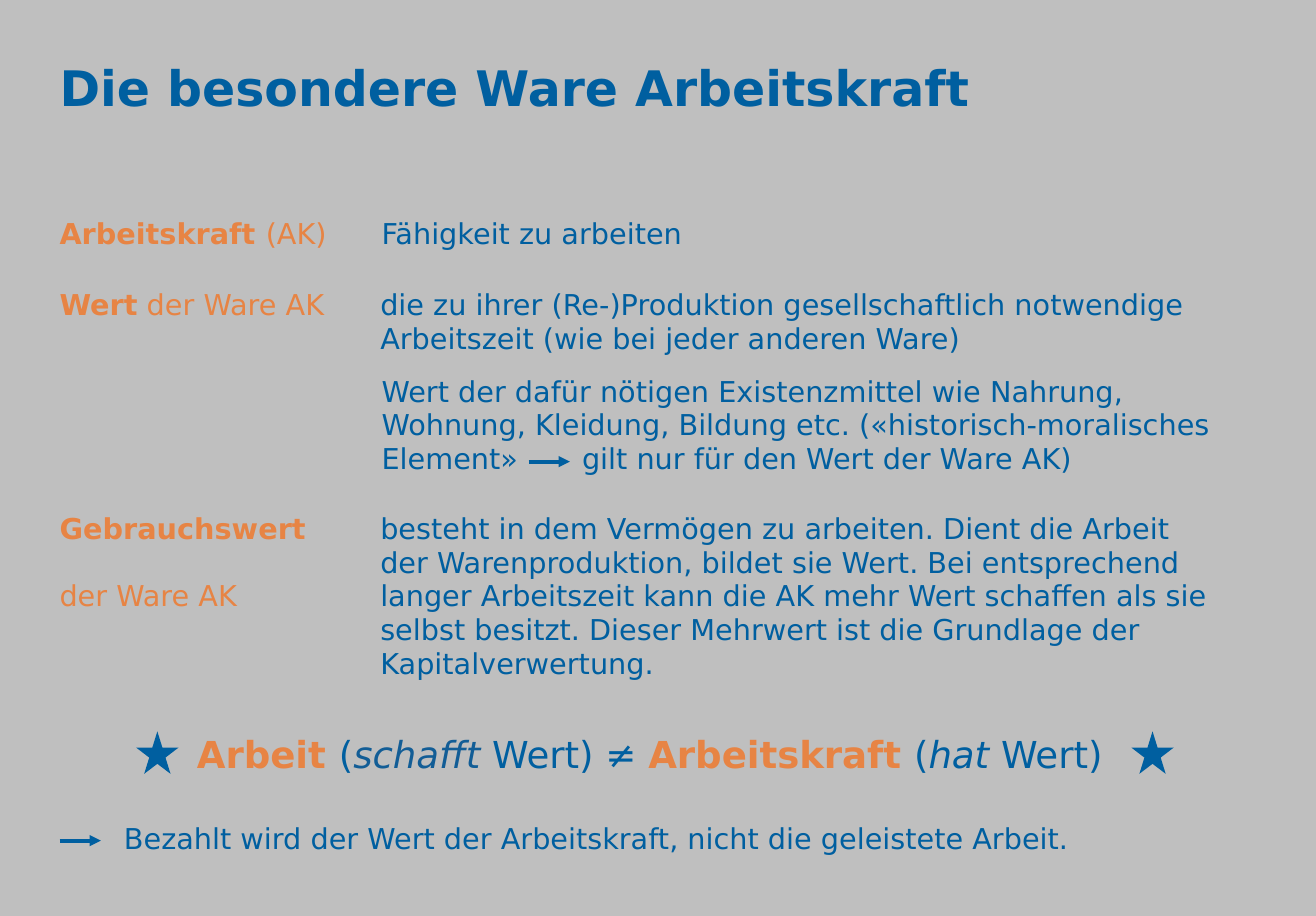
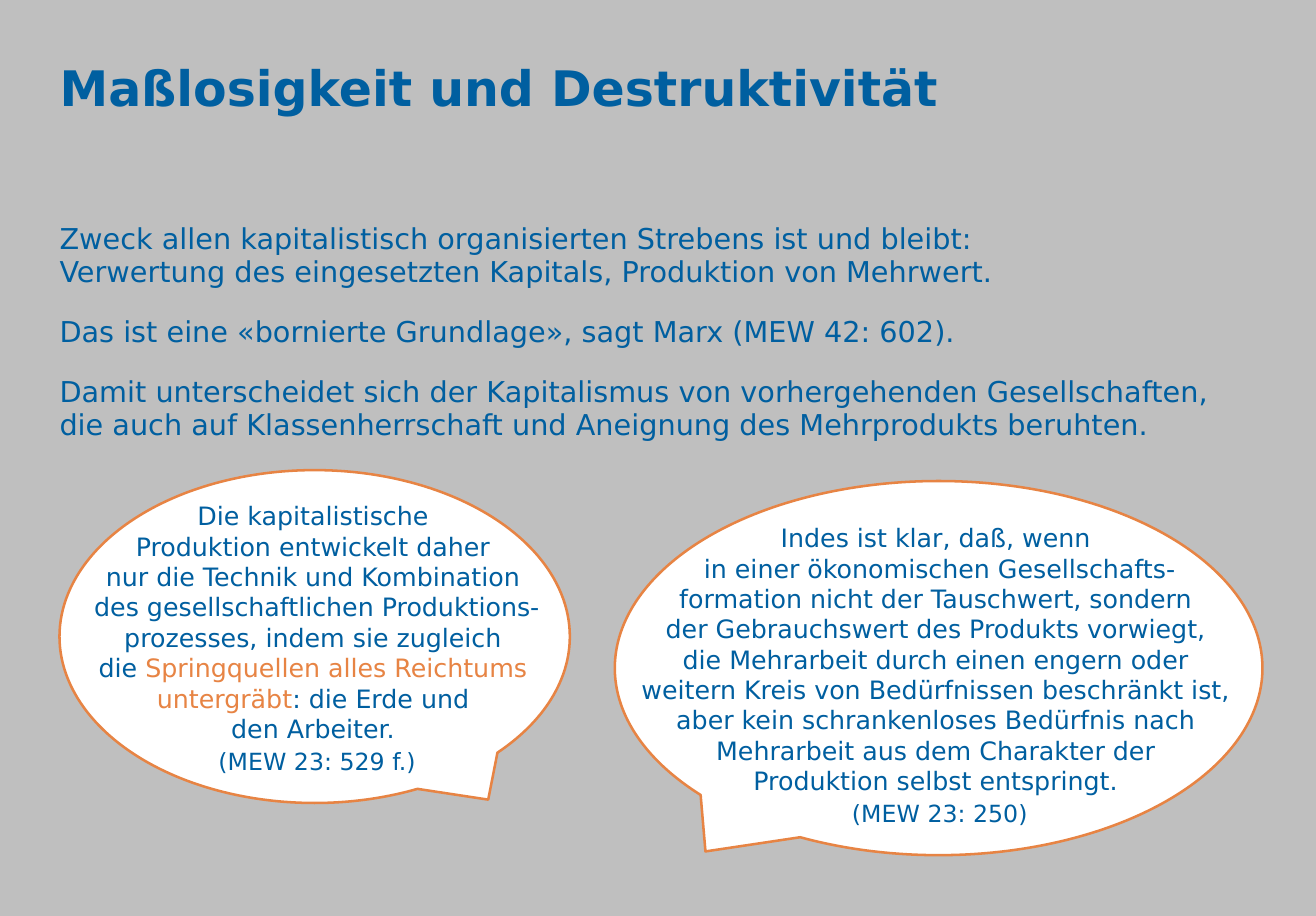
from lxml import etree
from pptx import Presentation
from pptx import util as u
from pptx.dml.color import RGBColor
from pptx.enum import shapes, text
from pptx.oxml import ns

COLORS = {
    "background": "BFBFBF",
    "blue": "005FA0",
    "orange": "E78444",
    "verb": "125D96",
    "white": "FFFFFF",
}
FONT = "DejaVu Sans"
LEFT = 0.49
TERM_WIDTH = 2.34
FULL_WIDTH = 9.83


def rgb(name):
    return RGBColor.from_string(COLORS[name])


class Deck:
    def __init__(self):
        self.prs = Presentation()
        self.prs.slide_width = u.Inches(10.83)
        self.prs.slide_height = u.Inches(7.54)
        background = self.prs.slide_master.background.fill
        background.solid()
        background.fore_color.rgb = rgb("background")
        self.slide = None

    def new_slide(self, heading):
        self.slide = self.prs.slides.add_slide(self.prs.slide_layouts[5])
        title = self.slide.shapes.title
        self.place(title, LEFT, 0.5, 9.84, 0.47)
        self.fill_frame(title.text_frame, [[(heading, "blue", "b")]], 29, 33)

    def place(self, shape, left, top, width, height):
        shape.left, shape.top = u.Inches(left), u.Inches(top)
        shape.width, shape.height = u.Inches(width), u.Inches(height)

    def fill_frame(self, frame, paragraphs, size, leading, align="LEFT", before=0):
        frame.word_wrap = True
        frame.auto_size = text.MSO_AUTO_SIZE.NONE
        frame.vertical_anchor = text.MSO_ANCHOR.TOP
        frame.margin_left = frame.margin_right = 0
        frame.margin_top = frame.margin_bottom = 0
        for index, runs in enumerate(paragraphs):
            paragraph = frame.add_paragraph() if index else frame.paragraphs[0]
            paragraph.alignment = getattr(text.PP_ALIGN, align)
            paragraph.line_spacing = u.Pt(leading)
            paragraph.space_before = u.Pt(before if index else 0)
            for wording, color, style in runs:
                self.add_run(paragraph, wording, color, style, size)

    def add_run(self, paragraph, wording, color, style, size):
        for index, line in enumerate(wording.split("\n")):
            if index:
                paragraph.add_line_break()
            if line:
                run = paragraph.add_run()
                run.text = line
                run.font.name = FONT
                run.font.size = u.Pt(size)
                run.font.bold = "b" in style
                run.font.italic = "i" in style
                run.font.color.rgb = rgb(color)

    def rich_text(self, box, paragraphs, size=17, leading=20, align="LEFT", before=0):
        frame = self.slide.shapes.add_textbox(*map(u.Inches, box)).text_frame
        self.fill_frame(frame, paragraphs, size, leading, align, before)
        return frame

    def body(self, box, wording):
        return self.rich_text(box, [[(wording, "blue", "")]])

    def tab_stop(self, paragraph, position):
        stops = etree.SubElement(paragraph._p.get_or_add_pPr(), ns.qn("a:tabLst"))
        etree.SubElement(stops, ns.qn("a:tab"), pos=str(u.Inches(position)), algn="l")

    def arrow(self, left, y, length=0.34):
        arrow = self.slide.shapes.add_connector(
            shapes.MSO_CONNECTOR.STRAIGHT,
            u.Inches(left), u.Inches(y), u.Inches(left + length), u.Inches(y))
        arrow.line.color.rgb = rgb("blue")
        arrow.line.width = u.Pt(2.25)
        etree.SubElement(arrow.line._get_or_add_ln(), ns.qn("a:tailEnd"), type="triangle")
        etree.SubElement(arrow._element.spPr, ns.qn("a:effectLst"))

    def preset(self, kind, box, fill, outline=None):
        shape = self.slide.shapes.add_shape(kind, *map(u.Inches, box))
        shape.shadow.inherit = False
        shape.fill.solid()
        shape.fill.fore_color.rgb = rgb(fill)
        if outline:
            shape.line.color.rgb = rgb(outline)
            shape.line.width = u.Pt(1.5)
        else:
            shape.line.fill.background()
        return shape

    def star(self, left):
        self.preset(shapes.MSO_SHAPE.STAR_5_POINT, (left, 6.02, 0.35, 0.35), "blue")

    def quote(self, bubble_box, tip, quote_box, passages, reference):
        bubble = self.preset(shapes.MSO_SHAPE.OVAL_CALLOUT, bubble_box, "white", "orange")
        for index, value in enumerate(tip):
            bubble.adjustments[index] = value
        frame = self.rich_text(quote_box, passages, 15, 18, "CENTER")
        source = frame.add_paragraph()
        source.alignment = text.PP_ALIGN.CENTER
        source.line_spacing = u.Pt(19)
        self.add_run(source, reference, "blue", "", 14)


def labour_power_slide(deck):
    deck.new_slide("Die besondere Ware Arbeitskraft")
    terms = [
        (1.78, [[("Arbeitskraft ", "orange", "b"), ("(AK)", "orange", "")]]),
        (2.37, [[("Wert", "orange", "b"), (" der Ware AK", "orange", "")]]),
        (4.21, [[("Gebrauchswert", "orange", "b")], [("der Ware AK", "orange", "")]]),
    ]
    for top, term in terms:
        deck.rich_text((LEFT, top, TERM_WIDTH, 0.29 + 0.56 * (len(term) - 1)),
                       term, before=20)

    deck.body((3.14, 1.78, 6.42, 0.29), "Fähigkeit zu arbeiten")
    deck.body((3.13, 2.37, 7.2, 0.57),
              "die zu ihrer (Re-)Produktion gesellschaftlich notwendige "
              "Arbeitszeit (wie bei jeder anderen Ware)")
    deck.body((3.13, 4.21, 7.17, 1.43),
              "besteht in dem Vermögen zu arbeiten. Dient die Arbeit \n"
              "der Warenproduktion, bildet sie Wert. Bei entsprechend "
              "langer Arbeitszeit kann die AK mehr Wert schaffen als sie "
              "selbst besitzt. Dieser Mehrwert ist die Grundlage der "
              "Kapitalverwertung.")
    subsistence = deck.body(
        (3.14, 3.08, 7.04, 0.86),
        "Wert der dafür nötigen Existenzmittel wie Nahrung, "
        "Wohnung, Kleidung, Bildung etc. («historisch-moralisches "
        "Element»\tgilt nur für den Wert der Ware AK)")
    deck.tab_stop(subsistence.paragraphs[0], 1.65)
    deck.arrow(4.35, 3.8)

    deck.rich_text((LEFT, 6.04, 9.81, 0.35), [[
        ("Arbeit ", "orange", "b"),
        ("(", "blue", ""),
        ("schafft ", "verb", "i"),
        ("Wert) ≠ ", "blue", ""),
        ("Arbeitskraft ", "orange", "b"),
        ("(", "blue", ""),
        ("hat", "blue", "i"),
        (" Wert) ", "blue", ""),
    ]], 22, 25, "CENTER")
    for left in (1.12, 9.31):
        deck.star(left)

    deck.body((1.02, 6.76, 8.86, 0.29),
              "Bezahlt wird der Wert der Arbeitskraft, nicht die geleistete Arbeit.")
    deck.arrow(LEFT, 6.92)


def destructiveness_slide(deck):
    deck.new_slide("Maßlosigkeit und Destruktivität")
    theses = [
        (1.82, "Zweck allen kapitalistisch organisierten Strebens ist und bleibt: \n"
               "Verwertung des eingesetzten Kapitals, Produktion von Mehrwert."),
        (2.59, "Das ist eine «bornierte Grundlage», sagt Marx (MEW 42: 602)."),
        (3.08, "Damit unterscheidet sich der Kapitalismus von vorhergehenden "
               "Gesellschaften, \n"
               "die auch auf Klassenherrschaft und Aneignung des Mehrprodukts beruhten."),
    ]
    for top, thesis in theses:
        deck.body((LEFT, top, FULL_WIDTH, 0.29 + 0.28 * thesis.count("\n")), thesis)

    deck.quote(
        (5.06, 3.96, 5.33, 3.08), (-0.36, 0.49), (5.15, 4.3, 5.17, 2.53),
        [[("Indes ist klar, daß, wenn \n"
           "in einer ökonomischen Gesellschafts-\n"
           "formation nicht der Tauschwert, sondern \n"
           "der Gebrauchswert des Produkts vorwiegt, \n"
           "die Mehrarbeit durch einen engern oder \n"
           "weitern Kreis von Bedürfnissen beschränkt ist, \n"
           "aber kein schrankenloses Bedürfnis nach \n"
           "Mehrarbeit aus dem Charakter der \n"
           "Produktion selbst entspringt. ", "blue", "")]],
        "(MEW 23: 250)")
    deck.quote(
        (LEFT, 3.87, 4.2, 2.74), (0.34, 0.49), (0.44, 4.12, 4.34, 2.28),
        [[("Die kapitalistische \n"
           "Produktion entwickelt daher \n"
           "nur die Technik und Kombination \n"
           "des gesellschaftlichen Produktions-", "blue", "")],
         [("prozesses, indem sie zugleich \ndie ", "blue", ""),
          ("Springquellen alles Reichtums \nuntergräbt", "orange", ""),
          (": die Erde und \nden Arbeiter. ", "blue", "")]],
        "(MEW 23: 529 f.)")


def main():
    deck = Deck()
    labour_power_slide(deck)
    destructiveness_slide(deck)
    deck.prs.save("out.pptx")


if __name__ == "__main__":
    main()
